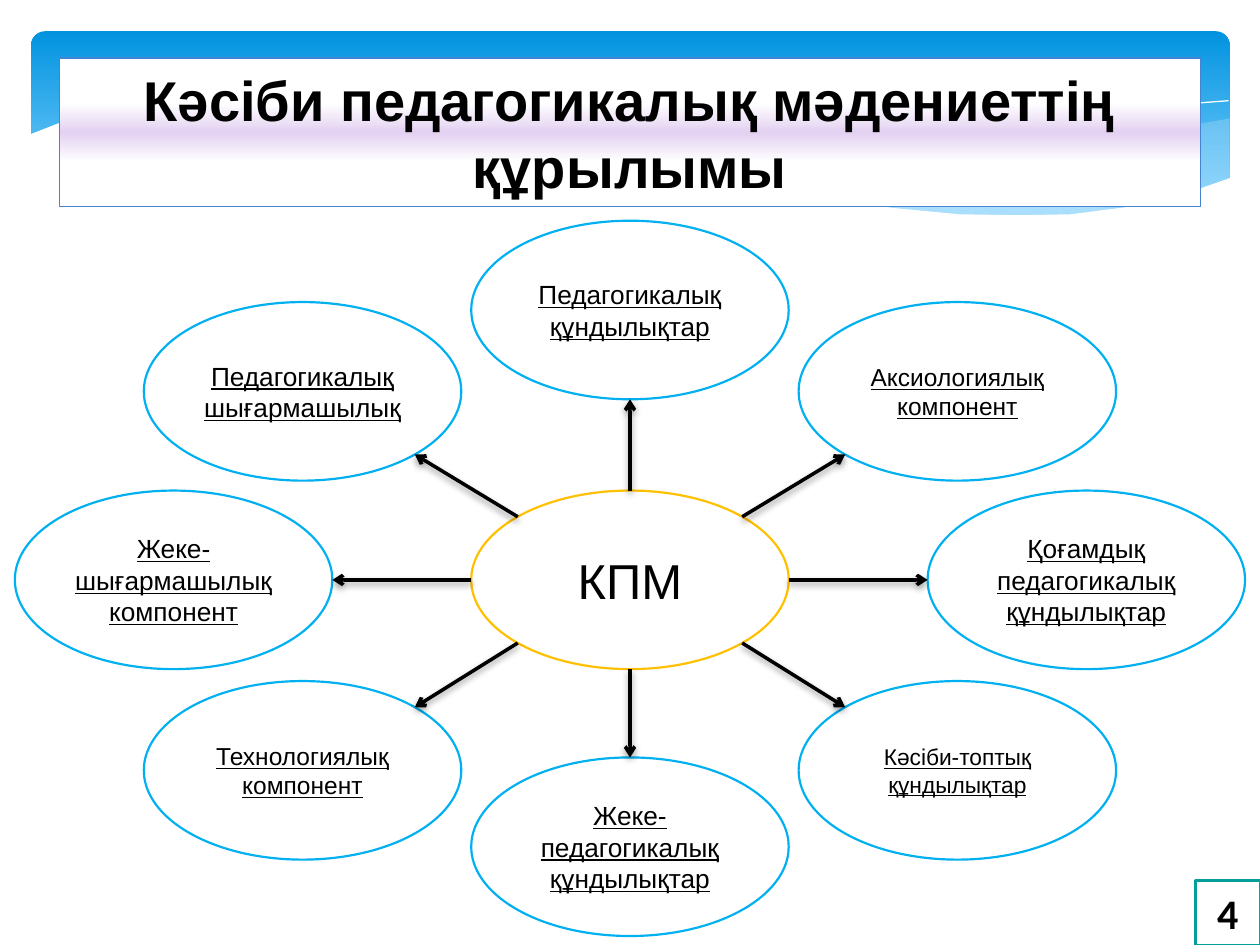
from math import hypot, sqrt
from lxml.etree import SubElement
from pptx import Presentation
from pptx.dml.color import RGBColor
from pptx.enum.shapes import MSO_CONNECTOR as Connector, MSO_SHAPE as Shape
from pptx.enum.text import MSO_ANCHOR as Anchor, PP_ALIGN as Align
from pptx.oxml import parse_xml
from pptx.oxml.ns import nsdecls, qn
from pptx.util import Cm, Pt

COLORS = {
    "black": "000000", "white": "FFFFFF", "header_top": "0293E0",
    "header_bottom": "83D3FE", "wave": "C6E7FC", "lilac": "E3D1F1",
    "title_line": "4584D3", "number_line": "049E9B",
    "satellite_line": "00B0F0", "center_line": "FFC000",
}
TITLE = "Кәсіби педагогикалық мәдениеттің құрылымы"
CENTER_TEXT = "КПМ"
PAGE_NUMBER = "4"
CENTER = (12.7, 11.69)
ELLIPSE = (6.4, 3.6)
SIDE_X, DIAGONAL_X = 9.2, 6.6
SATELLITES = [
    ("Педагогикалық құндылықтар", 15, 0, -5.44),
    ("Педагогикалық шығармашылық", 15, -DIAGONAL_X, -3.8),
    ("Аксиологиялық компонент", 14, DIAGONAL_X, -3.8),
    ("Жеке-шығармашылық компонент", 15, -SIDE_X, 0),
    ("Қоғамдық педагогикалық құндылықтар", 15, SIDE_X, 0),
    ("Технологиялық компонент", 14, -DIAGONAL_X, 3.84),
    ("Кәсіби-топтық құндылықтар", 13, DIAGONAL_X, 3.84),
    ("Жеке-педагогикалық құндылықтар", 15, 0, 5.38),
]
WAVE_UNIT = Cm(0.01)
WAVES = [
    ("wave", 29, None, [
        (2479, 239), (2375, 257), (2263, 279), (2113, 318), (1913, 363), (1679, 406),
        (1791, 419), (1923, 432), (2040, 437), (2169, 432), (2278, 419), (2375, 396),
        (2479, 358)]),
    ("wave", 40, None, [
        (2268, 424), (2126, 404), (1969, 378), (1793, 340), (1598, 295), (1445, 259),
        (1306, 234), (1181, 218), (1067, 208), (917, 203), (795, 208), (726, 218),
        (869, 239), (1026, 269), (1247, 320), (1438, 363), (1610, 396), (1765, 419),
        (1933, 434), (2078, 439), (2177, 434)]),
    (None, 100, "white", [
        (785, 229), (850, 216), (983, 208), (1143, 208), (1354, 224), (1544, 249),
        (1765, 290), (2019, 345), (2304, 422)]),
    (None, 100, "white", [
        (1557, 384), (1659, 358), (1829, 315), (2047, 264), (2200, 236), (2347, 213),
        (2477, 203)]),
    ("white", 100, None, [
        (2482, 358), (2388, 391), (2283, 416), (2159, 432), (2055, 434), (1933, 432),
        (1798, 419), (1646, 396), (1471, 366), (1278, 325), (1135, 290), (927, 244),
        (742, 216), (584, 201), (450, 198), (335, 205), (241, 216), (170, 231),
        (117, 249), (58, 272), (58, 569), (2482, 569)]),
]


def rgb(name):
    return RGBColor.from_string(COLORS[name])


def style(shape, fill, line, width=0):
    shape.shadow.inherit = False
    if fill:
        shape.fill.solid()
        shape.fill.fore_color.rgb = rgb(fill)
    else:
        shape.fill.background()
    if line:
        shape.line.color.rgb = rgb(line)
        shape.line.width = Pt(width)
    else:
        shape.line.fill.background()


def set_gradient(shape, stops):
    marks = "".join(
        f'<a:gs pos="{position * 1000}"><a:srgbClr val="{COLORS[name]}"/></a:gs>'
        for position, name in stops)
    gradient = parse_xml(
        f'<a:gradFill {nsdecls("a")} rotWithShape="1"><a:gsLst>{marks}</a:gsLst>'
        '<a:lin ang="5400000" scaled="0"/></a:gradFill>')
    properties = shape.element.spPr
    properties.replace(properties.find(qn("a:solidFill")), gradient)


def add_box(slide, kind, box, line, width=0):
    shape = slide.shapes.add_shape(kind, *(Cm(value) for value in box))
    style(shape, "white", line, width)
    return shape


def write(shape, text, size, font="Arial", bold=False, underline=False):
    frame = shape.text_frame
    frame.word_wrap = True
    frame.vertical_anchor = Anchor.MIDDLE
    paragraph = frame.paragraphs[0]
    paragraph.text = text
    paragraph.alignment = Align.CENTER
    paragraph.font.name = font
    paragraph.font.size = Pt(size)
    paragraph.font.bold = bold
    paragraph.font.underline = underline
    paragraph.font.color.rgb = rgb("black")


def add_wave(slide, fill, opacity, line, points):
    builder = slide.shapes.build_freeform(*points[0], scale=WAVE_UNIT)
    builder.add_line_segments(points[1:], close=fill is not None)
    wave = builder.convert_to_shape()
    style(wave, fill, line)
    if opacity < 100:
        color = wave.element.spPr.find(qn("a:solidFill"))[0]
        SubElement(color, qn("a:alpha"), val=str(opacity * 1000))


def add_ellipse(slide, dx, dy, line):
    width, height = ELLIPSE
    left, top = CENTER[0] + dx - width / 2, CENTER[1] + dy - height / 2
    return add_box(slide, Shape.OVAL, (left, top, width, height), line, 1.25)


def add_arrow(slide, dx, dy):
    signs = [(value > 0) - (value < 0) for value in (dx, dy)]
    reach = [sign / hypot(*signs) * size / 2 for sign, size in zip(signs, ELLIPSE)]
    start = [middle + part for middle, part in zip(CENTER, reach)]
    end = [middle + shift - part
           for middle, shift, part in zip(CENTER, (dx, dy), reach)]
    arrow = slide.shapes.add_connector(
        Connector.STRAIGHT, *(Cm(value) for value in start + end))
    arrow.line.color.rgb = rgb("black")
    arrow.line.width = Pt(2)
    properties = arrow.element.spPr
    SubElement(properties.find(qn("a:ln")), qn("a:tailEnd"), type="arrow")
    properties.append(parse_xml(
        f'<a:effectLst {nsdecls("a")}><a:outerShdw blurRad="{Pt(4)}" dist="{Pt(2)}" '
        f'dir="5400000" rotWithShape="0"><a:srgbClr val="{COLORS["black"]}">'
        '<a:alpha val="38000"/></a:srgbClr></a:outerShdw></a:effectLst>'))


def main():
    presentation = Presentation()
    presentation.slide_width, presentation.slide_height = Cm(25.4), Cm(19.05)
    slide = presentation.slides.add_slide(presentation.slide_layouts[6])

    header = add_box(slide, Shape.ROUNDED_RECTANGLE, (0.63, 0.63, 24.16, 3.96), None)
    header.adjustments[0] = 0.07
    set_gradient(header, [(0, "header_top"), (90, "header_bottom")])
    for wave in WAVES:
        add_wave(slide, *wave)

    title = add_box(slide, Shape.RECTANGLE, (1.2, 1.17, 23, 3), "title_line", 0.75)
    set_gradient(title, [(30, "white"), (50, "lilac"), (70, "white")])
    write(title, TITLE, 32, bold=True)

    number = add_box(slide, Shape.RECTANGLE, (24.1, 17.75, 1.3, 1.3), "number_line", 1.25)
    write(number, PAGE_NUMBER, 24, font="Calibri", bold=True)

    for text, size, dx, dy in SATELLITES:
        write(add_ellipse(slide, dx, dy, "satellite_line"), text, size, underline=True)
    write(add_ellipse(slide, 0, 0, "center_line"), CENTER_TEXT, 28)
    for _, _, dx, dy in SATELLITES:
        add_arrow(slide, dx, dy)

    presentation.save("out.pptx")


if __name__ == "__main__":
    main()
